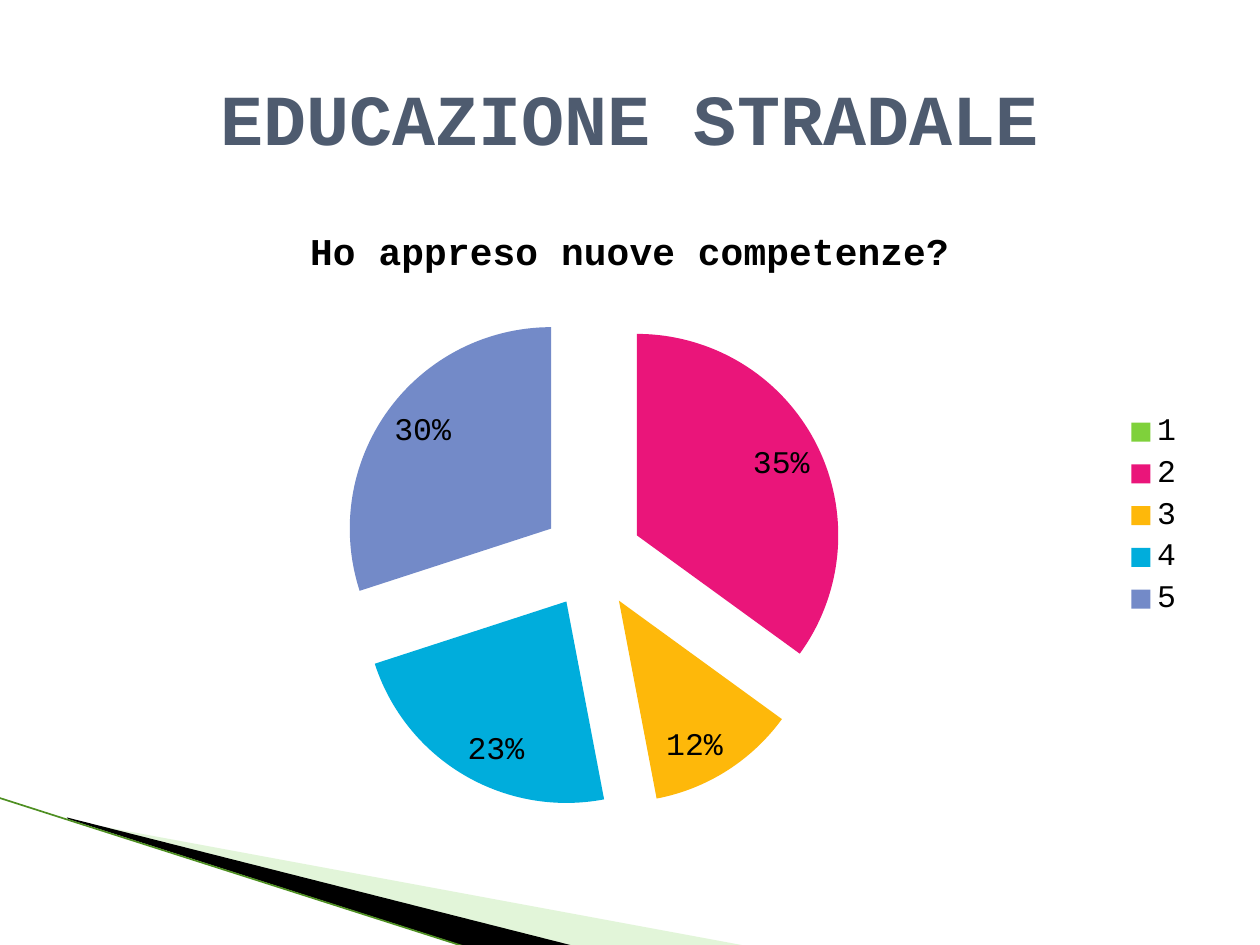
"""Build the road safety survey slide with its exploded pie chart."""
from typing import NamedTuple

from lxml.etree import SubElement
from pptx import Presentation
from pptx.chart.data import CategoryChartData as Data
from pptx.dml.color import RGBColor
from pptx.enum.chart import XL_CHART_TYPE as Kind
from pptx.enum.chart import XL_LABEL_POSITION as Spot
from pptx.enum.chart import XL_LEGEND_POSITION as Side
from pptx.enum.shapes import MSO_CONNECTOR as Link
from pptx.enum.text import MSO_ANCHOR as Anchor
from pptx.enum.text import PP_ALIGN as Align
from pptx.oxml import parse_xml
from pptx.oxml.ns import nsdecls, qn
from pptx.slide import Slide
from pptx.util import Cm, Pt

FONT = "Courier New"
BLACK = RGBColor(0x00, 0x00, 0x00)
SLATE = RGBColor(0x4E, 0x5B, 0x6F)
PALE = RGBColor(0xB8, 0xE7, 0xA1)
MOSS = RGBColor(0x4E, 0x8F, 0x22)
GREEN = RGBColor(0x7F, 0xD1, 0x3B)
PINK = RGBColor(0xEA, 0x15, 0x7A)
AMBER = RGBColor(0xFE, 0xB8, 0x0A)
CYAN = RGBColor(0x00, 0xAD, 0xDC)
BLUE = RGBColor(0x73, 0x8A, 0xC8)


class Wedge(NamedTuple):
    points: tuple[tuple[float, float], ...]
    color: RGBColor
    alpha: int


class Slice(NamedTuple):
    name: str
    value: int
    color: RGBColor


WEDGES = (
    Wedge(((1.4, 16.54), (15.11, 19.08), (11.58, 19.08), (1.4, 16.51)), PALE, 40),
    Wedge(((1.35, 16.48), (11.61, 19.08), (9.45, 19.1), (1.37, 16.51)), BLACK, 100),
)
SLICES = (
    Slice("1", 0, GREEN),
    Slice("2", 35, PINK),
    Slice("3", 12, AMBER),
    Slice("4", 23, CYAN),
    Slice("5", 30, BLUE),
)


def add_wedge(slide: Slide, wedge: Wedge) -> None:
    """Draw one corner wedge."""
    first, *rest = [(Cm(x), Cm(y)) for x, y in wedge.points]
    pen = slide.shapes.build_freeform(*first)
    pen.add_line_segments(rest, close=True)
    shape = pen.convert_to_shape()
    shape.shadow.inherit = False
    shape.line.fill.background()
    shape.fill.solid()
    shape.fill.fore_color.rgb = wedge.color
    if wedge.alpha < 100:
        tint = next(shape.element.spPr.iter(qn("a:srgbClr")))
        SubElement(tint, qn("a:alpha")).set("val", str(wedge.alpha * 1000))


def add_edge(slide: Slide) -> None:
    """Draw the thin line along the corner."""
    edge = slide.shapes.add_connector(
        Link.STRAIGHT, Cm(-0.03), Cm(16.08), Cm(9.42), Cm(19.1))
    edge.line.color.rgb = MOSS
    edge.line.width = Pt(0.95)
    SubElement(edge.element.spPr, qn("a:effectLst"))


def set_title(slide: Slide, text: str) -> None:
    """Place and format the slide title."""
    title = slide.shapes.title
    title.left, title.top = Cm(1.27), Cm(0.76)
    title.width, title.height = Cm(22.86), Cm(3.18)
    frame = title.text_frame
    frame.text = text
    frame.vertical_anchor = Anchor.MIDDLE
    line = frame.paragraphs[0]
    line.alignment = Align.CENTER
    font = line.runs[0].font
    font.name, font.size, font.bold = FONT, Pt(41), True
    font.color.rgb = SLATE


def add_pie(slide: Slide, title: str) -> None:
    """Add the exploded pie chart."""
    data = Data()
    data.categories = [part.name for part in SLICES]
    data.add_series("Series 1", [part.value for part in SLICES])
    chart = slide.shapes.add_chart(
        Kind.PIE, Cm(1.27), Cm(4.11), Cm(22.86), Cm(12.57), data).chart
    chart.font.name, chart.font.size = FONT, Pt(18)
    chart.font.color.rgb = BLACK

    chart.has_title = True
    chart.chart_title.include_in_layout = False
    frame = chart.chart_title.text_frame
    frame.text = title
    font = frame.paragraphs[0].runs[0].font
    font.name, font.size, font.bold = FONT, Pt(21.6), True
    font.color.rgb = BLACK

    chart.has_legend = True
    chart.legend.position = Side.RIGHT
    chart.legend.include_in_layout = False

    plot = chart.plots[0]
    plot.vary_by_categories = True
    series = plot.series[0]
    burst = parse_xml(f'<c:explosion {nsdecls("c")} val="25"/>')
    series.format.fill.background()
    root = next(chart.element.iter(qn("c:ser")))
    root.find(qn("c:spPr")).addnext(burst)
    for i, part in enumerate(SLICES):
        fill = series.points[i].format.fill
        fill.solid()
        fill.fore_color.rgb = part.color

    plot.has_data_labels = True
    labels = plot.data_labels
    labels.show_value = False
    labels.show_percentage = True
    labels.number_format = "0%;;"
    labels.number_format_is_linked = False
    labels.position = Spot.INSIDE_END


def main() -> None:
    """Build and save the slide."""
    deck = Presentation()
    deck.slide_width, deck.slide_height = Cm(25.4), Cm(19.05)
    slide = deck.slides.add_slide(deck.slide_layouts[5])
    for wedge in WEDGES:
        add_wedge(slide, wedge)
    add_edge(slide)
    add_pie(slide, "Ho appreso nuove competenze?")
    set_title(slide, "EDUCAZIONE STRADALE")
    deck.save("out.pptx")


if __name__ == "__main__":
    main()
